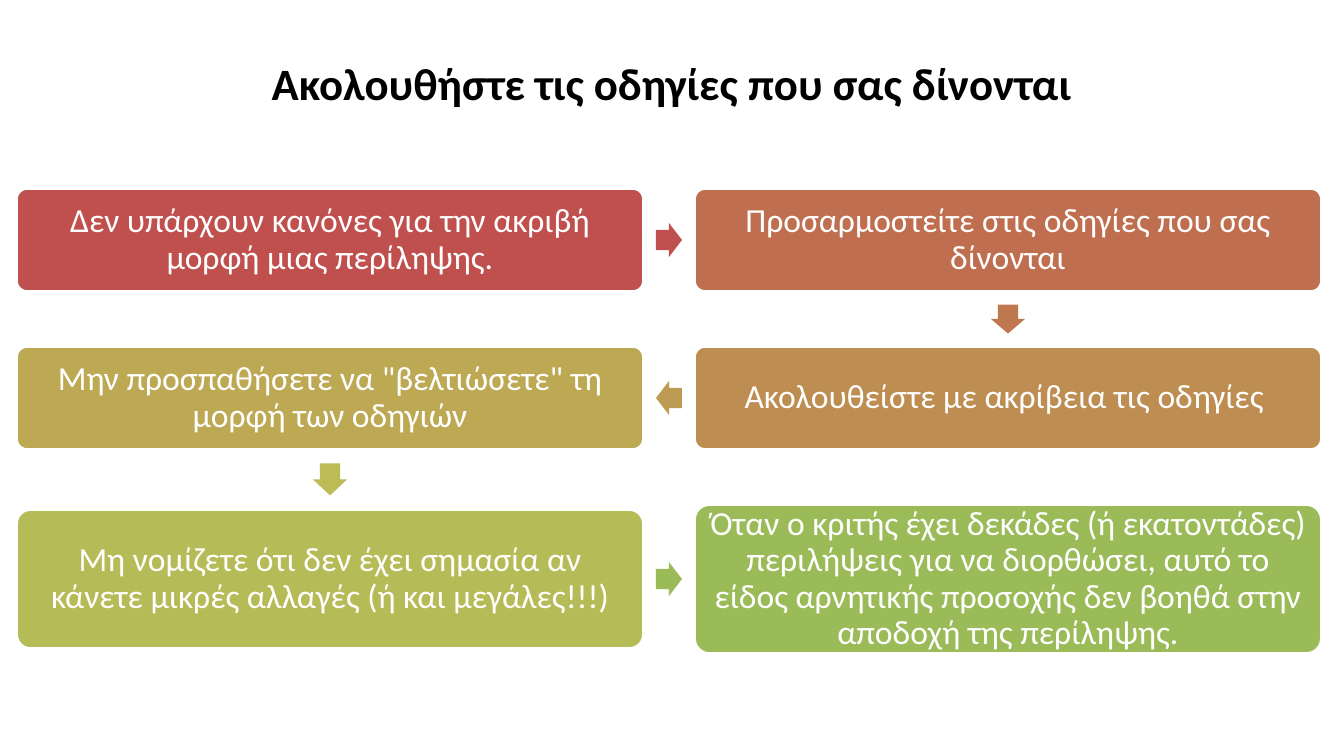
from dataclasses import dataclass

from pptx import Presentation
from pptx.dml.color import RGBColor
from pptx.enum.shapes import MSO_SHAPE
from pptx.enum.text import MSO_ANCHOR, PP_ALIGN
from pptx.util import Emu, Pt

ROUNDED = MSO_SHAPE.ROUNDED_RECTANGLE
ARROW = MSO_SHAPE.RIGHT_ARROW
MIDDLE = MSO_ANCHOR.MIDDLE
CENTER = PP_ALIGN.CENTER
TITLE_ONLY = 5


@dataclass(frozen=True)
class Theme:
    font: str = "Calibri"
    title_size: int = 32
    body_size: int = 24
    title_color: str = "000000"
    box_text: str = "FFFFFF"
    box_line: str = "FFFFFF"
    box_fills: tuple = ("C0504D", "BF6F4F", "BE8D52", "BDA954", "B5BC57", "9BBB59")
    arrow_fills: tuple = ("C0504D", "BF7750", "BD9B53", "BCBC56", "9BBB59")


THEME = Theme()

TITLE = "Ακολουθήστε τις οδηγίες που σας δίνονται"
STEPS = [
    "Δεν υπάρχουν κανόνες για την ακριβή μορφή μιας περίληψης.",
    "Προσαρμοστείτε στις οδηγίες που σας δίνονται",
    "Ακολουθείστε με ακρίβεια τις οδηγίες ",
    "Μην προσπαθήσετε να \"βελτιώσετε\" τη μορφή των οδηγιών",
    "Μη νομίζετε ότι δεν έχει σημασία αν κάνετε μικρές αλλαγές (ή και μεγάλες!!!)",
    "Όταν ο κριτής έχει δεκάδες (ή εκατοντάδες) περιλήψεις για να διορθώσει, "
    "αυτό το είδος αρνητικής προσοχής δεν βοηθά στην αποδοχή της περίληψης.",
]
BOX_HEIGHTS = [103, 103, 103, 103, 139, 149]
ARROW_LENGTHS = [26, 29, 26, 32, 26]
ARROW_TURNS = [0, 90, 180, 90, 0]
ARROW_BREADTH = 34
COLUMN_CENTERS = [330, 1008]
ROW_CENTERS = [240, 398, 579]
BOX_WIDTH = 627
BOX_INSET = 9


def px(n):
    return Emu(round(n * 914400 / 100.8))


def format_text(tf, size, color, bold=False):
    for p in tf.paragraphs:
        p.alignment = CENTER
        for r in p.runs:
            r.font.name = THEME.font
            r.font.size = Pt(size)
            r.font.bold = bold
            r.font.color.rgb = RGBColor.from_string(color)


def add_title(s):
    sp = s.shapes.title
    sp.left, sp.top, sp.width, sp.height = px(258), px(50), px(828), px(65)
    tf = sp.text_frame
    tf.text = TITLE
    tf.word_wrap = False
    tf.vertical_anchor = MIDDLE
    format_text(tf, THEME.title_size, THEME.title_color, bold=True)


def add_centered(s, kind, center, width, height, fill):
    x, y = center
    sp = s.shapes.add_shape(
        kind, px(x - width / 2), px(y - height / 2), px(width), px(height))
    sp.shadow.inherit = False
    sp.fill.solid()
    sp.fill.fore_color.rgb = RGBColor.from_string(fill)
    return sp


def add_step(s, text, center, height, fill):
    sp = add_centered(s, ROUNDED, center, BOX_WIDTH, height, fill)
    sp.adjustments[0] = 0.1
    sp.line.color.rgb = RGBColor.from_string(THEME.box_line)
    sp.line.width = Pt(2)
    tf = sp.text_frame
    tf.text = text
    tf.word_wrap = True
    tf.vertical_anchor = MIDDLE
    tf.margin_left = tf.margin_right = px(BOX_INSET)
    tf.margin_top = tf.margin_bottom = px(BOX_INSET)
    tf.paragraphs[0].line_spacing = 0.9
    format_text(tf, THEME.body_size, THEME.box_text)


def add_arrow(s, center, length, turn, fill):
    sp = add_centered(s, ARROW, center, length, ARROW_BREADTH, fill)
    sp.adjustments[0] = 0.6
    sp.adjustments[1] = 0.5
    sp.rotation = turn
    sp.line.fill.background()


def step_center(i):
    row, place = divmod(i, 2)
    column = (place + row) % 2
    return COLUMN_CENTERS[column], ROW_CENTERS[row]


def gap_center(i):
    (x1, y1), (x2, y2) = step_center(i), step_center(i + 1)
    bottom = y1 + BOX_HEIGHTS[i] / 2
    top = y2 - BOX_HEIGHTS[i + 1] / 2
    y = y1 if y1 == y2 else (bottom + top) / 2
    return (x1 + x2) / 2, y


def main():
    prs = Presentation()
    prs.slide_width, prs.slide_height = px(1344), px(756)
    s = prs.slides.add_slide(prs.slide_layouts[TITLE_ONLY])
    add_title(s)
    for i, text in enumerate(STEPS):
        add_step(s, text, step_center(i), BOX_HEIGHTS[i], THEME.box_fills[i])
    for i, length in enumerate(ARROW_LENGTHS):
        add_arrow(s, gap_center(i), length, ARROW_TURNS[i], THEME.arrow_fills[i])
    prs.save("out.pptx")


if __name__ == "__main__":
    main()
